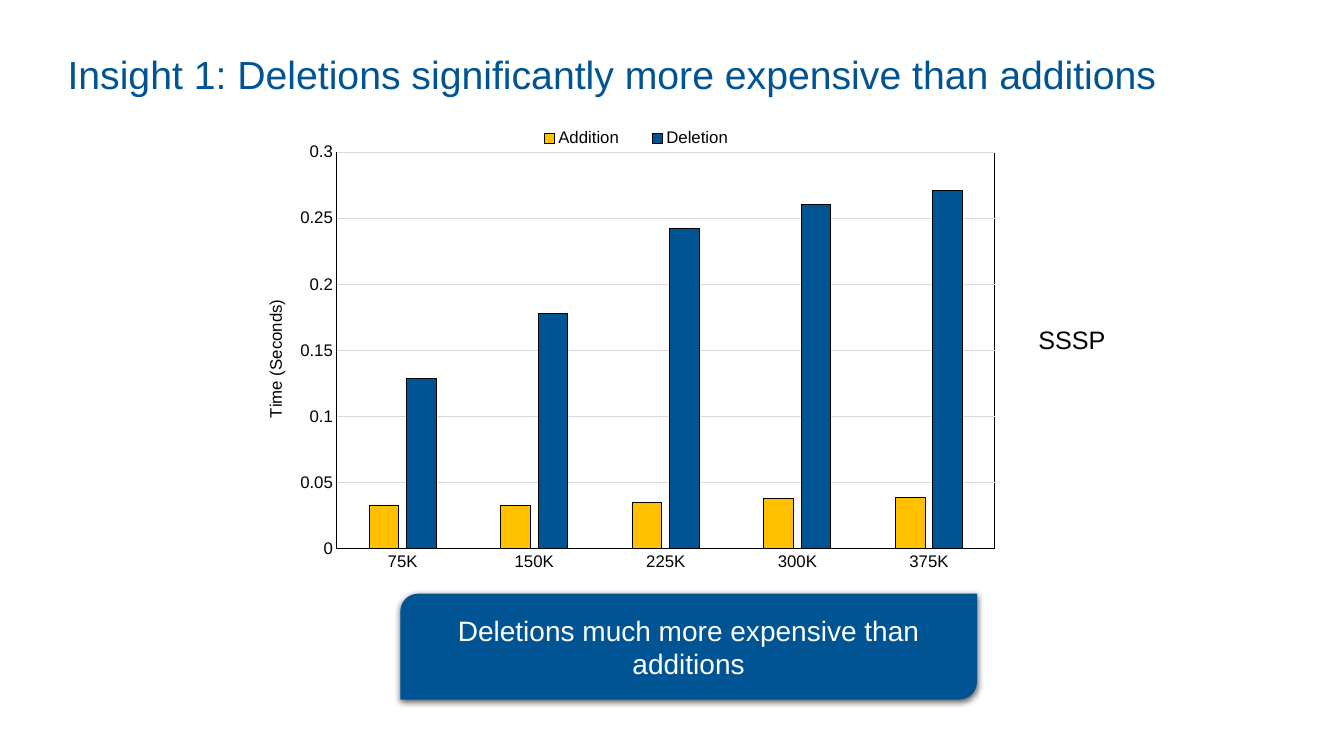
from lxml import etree
from pptx import Presentation
from pptx.chart.data import CategoryChartData
from pptx.dml.color import RGBColor
from pptx.enum.chart import XL_CHART_TYPE, XL_LEGEND_POSITION, XL_TICK_MARK
from pptx.enum.shapes import MSO_SHAPE
from pptx.enum.text import MSO_ANCHOR, MSO_AUTO_SIZE, PP_ALIGN
from pptx.oxml import parse_xml
from pptx.oxml.ns import nsdecls, qn
from pptx.util import Inches, Pt

COLUMNS = XL_CHART_TYPE.COLUMN_CLUSTERED
LEGEND_TOP = XL_LEGEND_POSITION.TOP
NO_TICK = XL_TICK_MARK.NONE
CALLOUT = MSO_SHAPE.ROUND_2_DIAG_RECTANGLE
MIDDLE, TOP = MSO_ANCHOR.MIDDLE, MSO_ANCHOR.TOP
GROW = MSO_AUTO_SIZE.SHAPE_TO_FIT_TEXT
LEFT, CENTER = PP_ALIGN.LEFT, PP_ALIGN.CENTER

BLUE = RGBColor(0x00, 0x54, 0x93)
YELLOW = RGBColor(0xFF, 0xC0, 0x00)
GRID = RGBColor(0xD9, 0xD9, 0xD9)
BLACK = RGBColor(0, 0, 0)
WHITE = RGBColor(0xFF, 0xFF, 0xFF)

SLIDE_W, SLIDE_H = 13.33, 7.5
LINE_W = 0.75
CATEGORIES = ["75K", "150K", "225K", "300K", "375K"]
SERIES = [
    ("Addition", YELLOW, [0.033, 0.033, 0.035, 0.038, 0.039]),
    ("Deletion", BLUE, [0.129, 0.178, 0.242, 0.26, 0.271]),
]


def box(left, top, width, height):
    """Turn inches into a left, top, width, height tuple."""
    return tuple(Inches(v) for v in (left, top, width, height))


def set_font(font, size, color):
    for name, value in {"name": "Arial", "size": Pt(size), "bold": False}.items():
        setattr(font, name, value)
    font.color.rgb = color


def set_line(line, color):
    line.color.rgb = color
    line.width = Pt(LINE_W)


def write(sp, text, size, color, align, anchor):
    tf = sp.text_frame
    tf.word_wrap = True
    tf.vertical_anchor = anchor
    p = tf.paragraphs[0]
    p.alignment = align
    r = p.add_run()
    r.text = text
    set_font(r.font, size, color)
    return p


def place_part(part, index, inner=False, **shares):
    """Fix a chart part at shares of the chart's size."""
    layout = part.find(qn("c:layout"))
    if layout is None:
        layout = etree.Element(qn("c:layout"))
        part.insert(index, layout)
    manual = etree.SubElement(layout, qn("c:manualLayout"))
    values = {"layoutTarget": "inner"} if inner else {}
    values.update(xMode="edge", yMode="edge", **shares)
    for name, value in values.items():
        etree.SubElement(manual, qn(f"c:{name}")).set("val", str(value))


def add_title(slide, text):
    sp = slide.shapes.title
    sp.left, sp.top, sp.width, sp.height = box(0.57, 0.44, 12.14, 0.64)
    write(sp, text, 28, BLUE, LEFT, MIDDLE).line_spacing = 0.9


def add_time_chart(slide):
    data = CategoryChartData()
    data.categories = CATEGORIES
    for name, _, values in SERIES:
        data.add_series(name, values)
    chart = slide.shapes.add_chart(COLUMNS, *box(2.37, 0.99, 7.65, 4.76), data).chart
    chart.has_title = False
    set_font(chart.font, 12, BLACK)

    # Columns
    plot = chart.plots[0]
    plot.gap_width, plot.overlap, plot.vary_by_categories = 219, -27, False
    for series, (_, color, _) in zip(plot.series, SERIES):
        series.format.fill.solid()
        series.format.fill.fore_color.rgb = color
        set_line(series.format.line, BLACK)

    # Axes
    cat_axis, val_axis = chart.category_axis, chart.value_axis
    for axis in (cat_axis, val_axis):
        axis.major_tick_mark = axis.minor_tick_mark = NO_TICK
        set_font(axis.tick_labels.font, 12, BLACK)
    set_line(cat_axis.format.line, BLACK)
    val_axis.format.line.fill.background()
    set_line(val_axis.major_gridlines.format.line, GRID)
    val_axis.minimum_scale, val_axis.maximum_scale, val_axis.major_unit = 0, 0.3, 0.05
    val_axis.tick_labels.number_format = "General"
    val_axis.tick_labels.number_format_is_linked = False
    tf = val_axis.axis_title.text_frame
    tf.text = "Time (Seconds)"
    set_font(tf.paragraphs[0].runs[0].font, 12, BLACK)

    # Legend
    chart.has_legend = True
    legend = chart.legend
    legend.position, legend.include_in_layout = LEGEND_TOP, False
    set_font(legend.font, 12, BLACK)

    # Plot frame and places of the parts
    area = chart.element.find(".//" + qn("c:plotArea"))
    area.append(parse_xml(
        f'<c:spPr {nsdecls("c", "a")}><a:noFill/><a:ln w="{Pt(LINE_W)}"><a:solidFill>'
        f'<a:srgbClr val="{BLACK}"/></a:solidFill></a:ln></c:spPr>'))
    place_part(area, 0, inner=True, x=0.127, y=0.109, w=0.853, h=0.827)
    place_part(chart.element.find(".//" + qn("c:legend")), 1, x=0.36, y=0.05, w=0.31, h=0.06)
    place_part(area.find(".//" + qn("c:title")), 1, x=0.03, y=0.41)


def add_callout(slide, text):
    sp = slide.shapes.add_shape(CALLOUT, *box(3.97, 5.89, 5.72, 1.05))
    sp.fill.solid()
    sp.fill.fore_color.rgb = BLUE
    sp.line.fill.background()
    sp.shadow.inherit = False
    # Soft shadow straight below
    effects = sp._element.spPr.find(qn("a:effectLst"))
    effects.append(parse_xml(
        f'<a:outerShdw {nsdecls("a")} blurRad="{Pt(4.5)}" dist="{Pt(1.5)}" dir="5400000" '
        f'rotWithShape="0"><a:srgbClr val="{BLACK}"><a:alpha val="63000"/></a:srgbClr>'
        '</a:outerShdw>'))
    write(sp, text, 20, WHITE, CENTER, MIDDLE)


def add_label(slide, text):
    sp = slide.shapes.add_textbox(*box(10.2, 3.17, 0.92, 0.4))
    write(sp, text, 18, BLACK, LEFT, TOP)
    sp.text_frame.auto_size = GROW


def main():
    prs = Presentation()
    prs.slide_width, prs.slide_height = Inches(SLIDE_W), Inches(SLIDE_H)
    slide = prs.slides.add_slide(prs.slide_layouts.get_by_name("Title Only"))
    add_title(slide, "Insight 1: Deletions significantly more expensive than additions")
    add_time_chart(slide)
    add_callout(slide, "Deletions much more expensive than additions")
    add_label(slide, "SSSP")
    prs.save("out.pptx")


if __name__ == "__main__":
    main()
